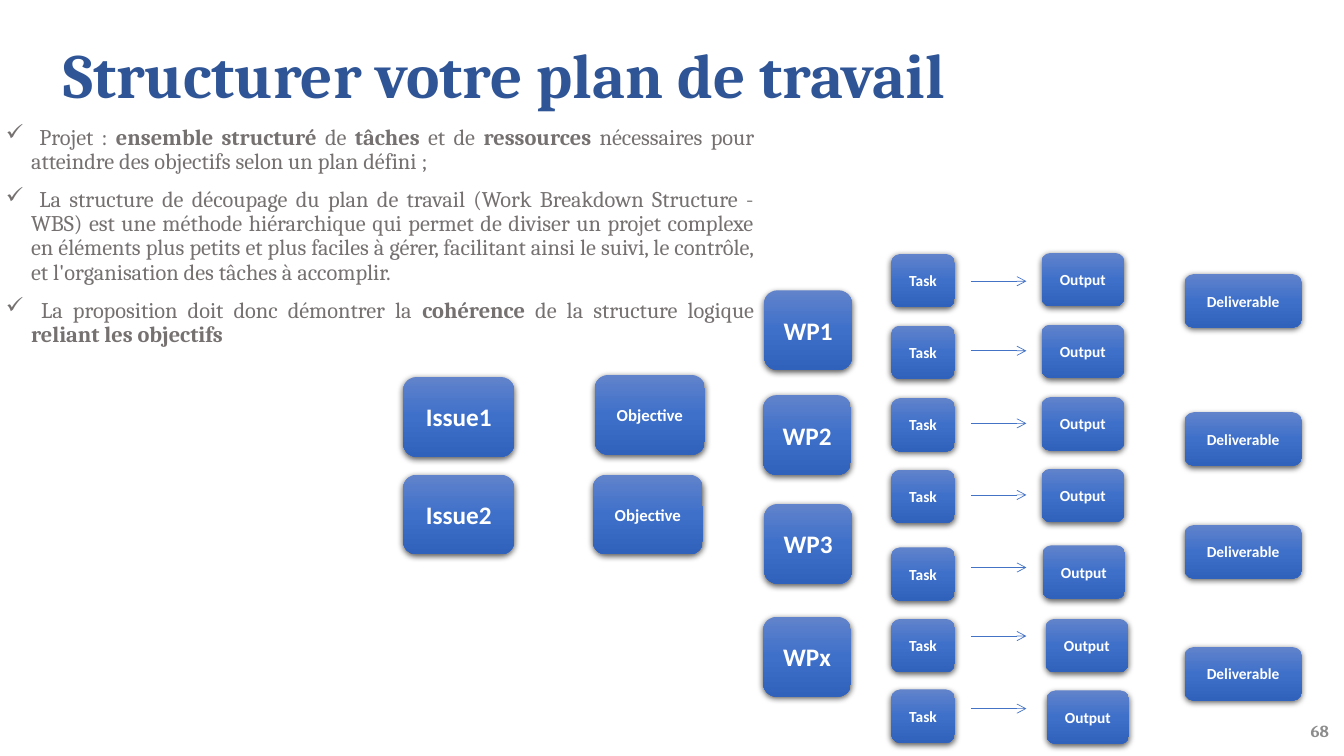
from dataclasses import dataclass

from pptx import Presentation
from pptx import util as u
from pptx.dml.color import RGBColor
from pptx.enum import shapes, text
from pptx.oxml import parse_xml
from pptx.oxml.ns import nsdecls, qn

TITLE = "Structurer votre plan de travail"
PAGE_NUMBER = "68"
POINTS = [
    [(" Projet : ", False), ("ensemble structuré ", True), ("de ", False),
     ("tâches", True), (" et de ", False), ("ressources", True),
     (" nécessaires pour atteindre des objectifs selon un plan défini ;", False)],
    [(" La structure de découpage du plan de travail (Work Breakdown Structure - WBS) "
      "est une méthode hiérarchique qui permet de diviser un projet complexe en éléments "
      "plus petits et plus faciles à gérer, facilitant ainsi le suivi, le contrôle, "
      "et l'organisation des tâches à accomplir.", False)],
    [(" La proposition doit donc démontrer la ", False), ("cohérence", True),
     (" de la structure logique ", False), ("reliant les objectifs", True)],
]


@dataclass(frozen=True)
class Theme:
    heading_font: str = "Cambria"
    box_font: str = "Calibri"
    title: str = "2F5597"
    body: str = "767171"
    number: str = "8C8C8C"
    label: str = "FFFFFF"
    arrow: str = "4472C4"
    shadow: str = "000000"
    gradient: tuple = ((0, "6183CB"), (50, "3E70CA"), (100, "3062BB"))
    title_size: int = 45
    body_size: int = 16
    large: int = 18
    medium: int = 12
    small: int = 11


THEME = Theme()

COLUMNS = [
    (1.09, 0.79, THEME.medium, [("Objective", 5.9, 3.72), ("Objective", 5.88, 4.71)]),
    (0.87, 0.79, THEME.large, [("WP1", 7.58, 2.88), ("WP2", 7.57, 3.92),
                               ("WP3", 7.58, 5), ("WPx", 7.57, 6.12)]),
    (1.1, 0.79, THEME.large, [("Issue1", 4, 3.74), ("Issue2", 4, 4.71)]),
    (1.16, 0.53, THEME.small, [("Deliverable", 11.75, top) for top in (2.72, 4.09, 5.21, 6.42)]),
    (0.63, 0.53, THEME.small, [("Task", 8.84, top)
                               for top in (2.52, 3.23, 3.95, 4.66, 5.43, 6.14, 6.84)]),
    (0.82, 0.53, THEME.small, [("Output", left, top) for left, top in (
        (10.33, 2.51), (10.33, 3.22), (10.33, 3.94), (10.33, 4.65),
        (10.34, 5.41), (10.37, 6.14), (10.38, 6.85))]),
]
ARROW_START, ARROW_END = 9.63, 10.18
ARROW_HEIGHTS = (2.79, 3.48, 4.2, 4.91, 5.63, 6.31, 7.03)


def element(tag, attributes="", content=""):
    return parse_xml(f"<a:{tag} {nsdecls('a')} {attributes}>{content}</a:{tag}>")


def color_xml(color, content=""):
    return f'<a:srgbClr val="{color}">{content}</a:srgbClr>'


def add_span(para, words, font, size, color, bold):
    span = para.add_run()
    span.text = words
    span.font.name = font
    span.font.size = u.Pt(size)
    span.font.bold = bold
    span.font.color.rgb = RGBColor.from_string(color)


def place(shape, left, top, width, height):
    shape.left, shape.top = u.Inches(left), u.Inches(top)
    shape.width, shape.height = u.Inches(width), u.Inches(height)


def add_title(page):
    title = page.shapes.title
    place(title, 0.53, 0.4, 12.26, 0.75)
    frame = title.text_frame
    frame.auto_size = text.MSO_AUTO_SIZE.NONE
    frame.vertical_anchor = text.MSO_ANCHOR.MIDDLE
    para = frame.paragraphs[0]
    para.alignment = text.PP_ALIGN.LEFT
    para.line_spacing = 0.9
    add_span(para, TITLE, THEME.heading_font, THEME.title_size, THEME.title, True)


def add_text_frame(page, left, top, width, height):
    box = page.shapes.add_textbox(*map(u.Inches, (left, top, width, height)))
    box.text_frame.word_wrap = True
    return box.text_frame


def add_points(page):
    frame = add_text_frame(page, -0.04, 1.2, 7.62, 2.69)
    for index, point in enumerate(POINTS):
        para = frame.add_paragraph() if index else frame.paragraphs[0]
        para.alignment = text.PP_ALIGN.JUSTIFY
        para.line_spacing = 0.9
        para.space_before = u.Pt(10)
        properties = para._p.get_or_add_pPr()
        properties.set("marL", str(u.Inches(0.25)))
        properties.set("indent", str(-u.Inches(0.25)))
        properties.append(element("buClr", content=color_xml(THEME.body)))
        properties.append(element("buChar", 'char="✓"'))
        for words, bold in point:
            add_span(para, words, THEME.heading_font, THEME.body_size, THEME.body, bold)


def add_page_number(page):
    frame = add_text_frame(page, 10.28, 7.05, 3, 0.4)
    frame.vertical_anchor = text.MSO_ANCHOR.MIDDLE
    para = frame.paragraphs[0]
    para.alignment = text.PP_ALIGN.RIGHT
    add_span(para, PAGE_NUMBER, THEME.heading_font, THEME.medium, THEME.number, True)


def add_box(page, label, left, top, width, height, size):
    box = page.shapes.add_shape(shapes.MSO_SHAPE.ROUNDED_RECTANGLE,
                                *map(u.Inches, (left, top, width, height)))
    stops = "".join(f'<a:gs pos="{position * 1000}">{color_xml(color)}</a:gs>'
                    for position, color in THEME.gradient)
    properties = box._element.spPr
    properties.append(element("gradFill", 'rotWithShape="1"',
                              f'<a:gsLst>{stops}</a:gsLst><a:lin ang="5400000" scaled="0"/>'))
    box.line.fill.background()
    box.shadow.inherit = False
    properties.find(qn("a:effectLst")).append(element(
        "outerShdw",
        f'blurRad="{u.Pt(4.5)}" dist="{u.Pt(1.5)}" dir="5400000" algn="ctr" rotWithShape="0"',
        color_xml(THEME.shadow, '<a:alpha val="63000"/>')))
    frame = box.text_frame
    frame.word_wrap = True
    frame.margin_left = frame.margin_right = u.Inches(0.05)
    frame.vertical_anchor = text.MSO_ANCHOR.MIDDLE
    para = frame.paragraphs[0]
    para.alignment = text.PP_ALIGN.CENTER
    add_span(para, label, THEME.box_font, size, THEME.label, True)


def add_arrow(page, height):
    arrow = page.shapes.add_connector(
        shapes.MSO_CONNECTOR.STRAIGHT,
        *map(u.Inches, (ARROW_START, height, ARROW_END, height)))
    arrow.line.color.rgb = RGBColor.from_string(THEME.arrow)
    arrow.line.width = u.Pt(0.5)
    arrow.line._get_or_add_ln().append(element("tailEnd", 'type="arrow"'))
    arrow._element.spPr.append(element("effectLst"))


def main():
    deck = Presentation()
    deck.slide_width, deck.slide_height = u.Inches(13.33), u.Inches(7.5)
    page = deck.slides.add_slide(deck.slide_layouts[5])
    add_title(page)
    add_points(page)
    add_page_number(page)
    for width, height, size, boxes in COLUMNS:
        for label, left, top in boxes:
            add_box(page, label, left, top, width, height, size)
    for height in ARROW_HEIGHTS:
        add_arrow(page, height)
    deck.save("out.pptx")


if __name__ == "__main__":
    main()
